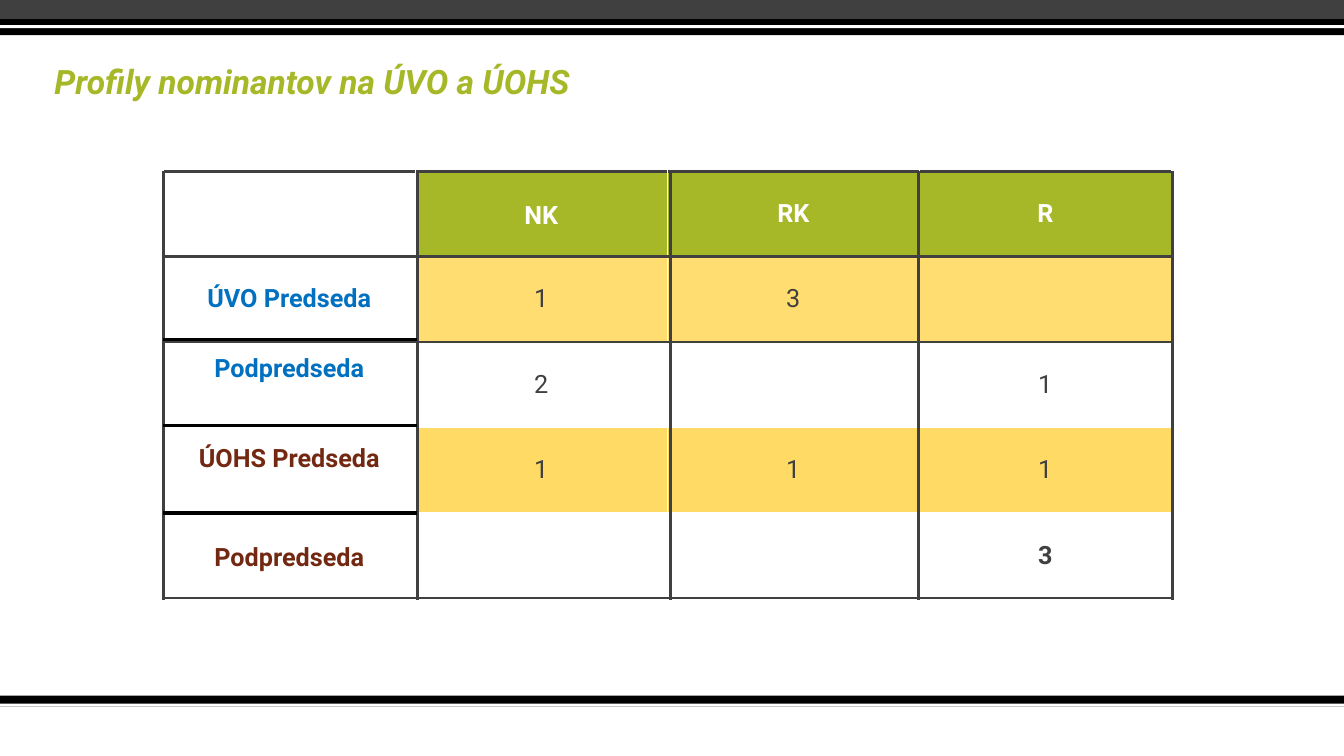
from dataclasses import dataclass

from lxml import etree
from pptx import Presentation
from pptx import util as u
from pptx.dml.color import RGBColor
from pptx.enum import shapes, text
from pptx.oxml import ns

Pt = u.Pt
BLACK = RGBColor(0x00, 0x00, 0x00)
WHITE = RGBColor(0xFF, 0xFF, 0xFF)
GRAY = RGBColor(0x40, 0x40, 0x40)
GREEN = RGBColor(0xA6, 0xB7, 0x27)
BLUE = RGBColor(0x00, 0x70, 0xC0)
BROWN = RGBColor(0x72, 0x28, 0x11)
LIGHT_YELLOW = RGBColor(0xFF, 0xDD, 0x71)
YELLOW = RGBColor(0xFF, 0xDA, 0x65)

SLIDE_WIDTH, SLIDE_HEIGHT = 960, 540
TABLE_LEFT, TABLE_TOP = 116.64, 122.4
COLUMN_WIDTH, ROW_HEIGHT = 180, 61
LINES_BOTTOM = 428.4


@dataclass(frozen=True)
class Bar:
    top: float
    height: float
    color: RGBColor


@dataclass(frozen=True)
class Rule:
    start: tuple[float, float]
    end: tuple[float, float]
    color: RGBColor


@dataclass(frozen=True)
class Row:
    texts: tuple[str, str, str, str]
    label_color: RGBColor
    value_color: RGBColor
    fill: RGBColor
    bold: tuple[bool, bool, bool, bool]
    label_bottom: float = 3.6


LABEL_BOLD = (True, False, False, False)
BARS = [
    Bar(496.8, 7.9, BLACK),
    Bar(502.6, 2.1, WHITE),
    Bar(0, 13.7, GRAY),
    Bar(13.7, 11.5, BLACK),
    Bar(18, 2.1, WHITE),
]
ROWS = [
    Row(("", "NK", "RK", "R"), WHITE, WHITE, GREEN, (True,) * 4),
    Row(("ÚVO Predseda", "1", "3", ""), BLUE, GRAY, LIGHT_YELLOW, LABEL_BOLD),
    Row(("Podpredseda", "2", "", "1"), BLUE, GRAY, WHITE, LABEL_BOLD, 26.4),
    Row(("ÚOHS Predseda", "1", "1", "1"), BROWN, GRAY, YELLOW, LABEL_BOLD, 20),
    Row(("Podpredseda", "", "", "3"), BROWN, GRAY, WHITE, (True, False, False, True)),
]
LOOSE_CELLS = {(0, 1), (4, 0)}
COLUMN_LINES = [116.64, 298.08, 478.8, 655.92, 837.36]
LABEL_LINES = [242.64, 303.84, 366.48]
RULES = [Rule((x, TABLE_TOP), (x, LINES_BOTTOM), GRAY) for x in COLUMN_LINES] + [
    Rule((COLUMN_LINES[0], y), (COLUMN_LINES[1], y), BLACK) for y in LABEL_LINES
]


def apply_format(target, values: dict) -> None:
    for name, value in values.items():
        setattr(target, name, value)


def format_font(font, size: float, color: RGBColor, bold: bool, italic: bool = False) -> None:
    apply_format(font, {"name": "Roboto", "size": Pt(size), "bold": bold, "italic": italic})
    font.color.rgb = color


def add_bar(slide, bar: Bar) -> None:
    shape = slide.shapes.add_shape(
        shapes.MSO_SHAPE.RECTANGLE, 0, Pt(bar.top), Pt(SLIDE_WIDTH), Pt(bar.height)
    )
    shape.shadow.inherit = False
    shape.fill.solid()
    shape.fill.fore_color.rgb = bar.color
    shape.line.fill.background()


def add_rule(slide, rule: Rule) -> None:
    points = [Pt(value) for value in rule.start + rule.end]
    connector = slide.shapes.add_connector(shapes.MSO_CONNECTOR.STRAIGHT, *points)
    connector.line.color.rgb = rule.color
    connector.line.width = Pt(2.25)
    etree.SubElement(connector._element.spPr, ns.qn("a:effectLst"))


def add_borders(cell, sides: list[str]) -> None:
    properties = cell._tc.get_or_add_tcPr()
    for index, side in enumerate(sides):
        border = etree.Element(ns.qn(f"a:ln{side}"), w=str(Pt(2)))
        fill = etree.SubElement(border, ns.qn("a:solidFill"))
        etree.SubElement(fill, ns.qn("a:srgbClr"), val=str(GRAY))
        properties.insert(index, border)


def set_title(slide) -> None:
    title = slide.shapes.title
    apply_format(title, {"left": Pt(31.7), "top": Pt(43.2), "width": Pt(890), "height": Pt(40)})
    apply_format(title.text_frame, {
        "text": "Profily nominantov na ÚVO a\u00a0ÚOHS".replace("\u00a0", " "),
        "vertical_anchor": text.MSO_ANCHOR.TOP,
        "word_wrap": True,
    })
    paragraph = title.text_frame.paragraphs[0]
    apply_format(paragraph, {"alignment": text.PP_ALIGN.LEFT, "line_spacing": 0.9})
    format_font(paragraph.runs[0].font, 24, GREEN, True, True)


def fill_cell(cell, row: Row, row_index: int, column: int) -> None:
    is_label = column == 0
    cell.fill.solid()
    cell.fill.fore_color.rgb = WHITE if is_label else row.fill
    cell.vertical_anchor = text.MSO_ANCHOR.MIDDLE
    if is_label:
        cell.margin_bottom = Pt(row.label_bottom)
    paragraph = cell.text_frame.paragraphs[0]
    paragraph.alignment = text.PP_ALIGN.CENTER
    if (row_index, column) in LOOSE_CELLS:
        paragraph.line_spacing = 1.15
        apply_format(cell, {"margin_top": 0, "margin_bottom": 0})
    if row.texts[column]:
        run = paragraph.add_run()
        run.text = row.texts[column]
        color = row.label_color if is_label else row.value_color
        format_font(run.font, 18, color, row.bold[column])
    sides = ["T"] if row_index in (0, 1) else []
    sides += ["B"] if row_index in (0, len(ROWS) - 1) else []
    add_borders(cell, sides)


def add_nominee_table(slide) -> None:
    column_count = len(ROWS[0].texts)
    frame = slide.shapes.add_table(
        len(ROWS), column_count, Pt(TABLE_LEFT), Pt(TABLE_TOP),
        Pt(COLUMN_WIDTH * column_count), Pt(ROW_HEIGHT * len(ROWS)),
    )
    table = frame.table
    apply_format(table, {"first_row": False, "horz_banding": False})
    for row_index, row in enumerate(ROWS):
        for column in range(column_count):
            fill_cell(table.cell(row_index, column), row, row_index, column)


def main() -> None:
    presentation = Presentation()
    apply_format(presentation, {"slide_width": Pt(SLIDE_WIDTH), "slide_height": Pt(SLIDE_HEIGHT)})
    slide = presentation.slides.add_slide(presentation.slide_layouts[5])
    for bar in BARS:
        add_bar(slide, bar)
    set_title(slide)
    add_nominee_table(slide)
    for rule in RULES:
        add_rule(slide, rule)
    presentation.save("out.pptx")


if __name__ == "__main__":
    main()
